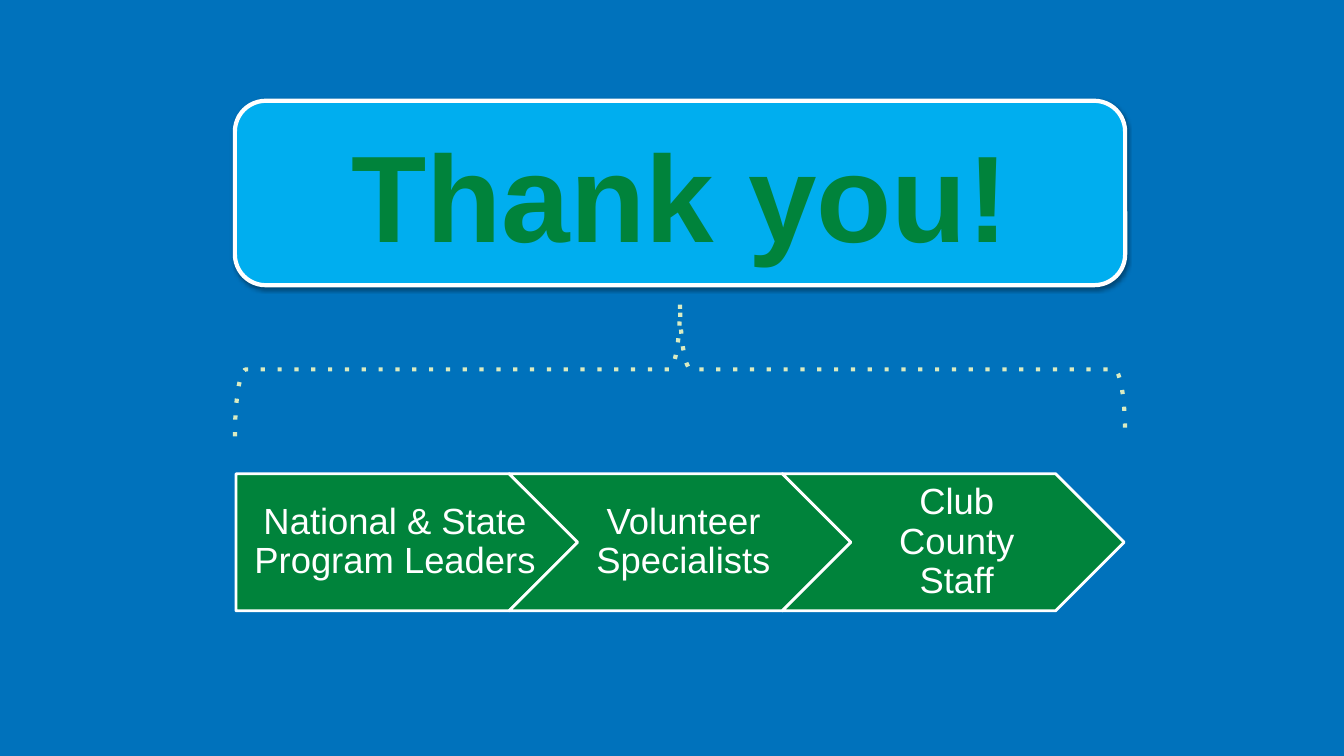
from lxml import etree
from pptx import Presentation
from pptx import util as u
from pptx.dml.color import RGBColor
from pptx.enum import dml, shapes, text
from pptx.oxml import ns

COLORS = {
    "background": "0072BC",
    "banner": "00AEEF",
    "green": "00833B",
    "white": "FFFFFF",
    "brace": "DAEBC1",
    "shadow": "000000",
}
AUDIENCES = ["National & State Program Leaders", "Volunteer Specialists", "Club County Staff"]
BANNER_BOX = (2.33, 1, 8.83, 1.83)
ARROW_LEFT, ARROW_TOP, ARROW_WIDTH, ARROW_HEIGHT = 2.34, 4.7, 3.39, 1.36
ARROW_STEP = ARROW_WIDTH - ARROW_HEIGHT / 2


def color(name):
    return RGBColor.from_string(COLORS[name])


def add_outline_shape(slide, kind, box, fill, line, width, adjustments):
    shape = slide.shapes.add_shape(kind, *map(u.Inches, box))
    shape.shadow.inherit = False
    if fill:
        shape.fill.solid()
        shape.fill.fore_color.rgb = color(fill)
    else:
        shape.fill.background()
    shape.line.color.rgb = color(line)
    shape.line.width = u.Pt(width)
    for index, value in enumerate(adjustments):
        shape.adjustments[index] = value
    return shape


def write_text(shape, words, size, font_color, insets, bold=False, spacing=1.0):
    frame = shape.text_frame
    frame.text = words
    frame.word_wrap = True
    frame.auto_size = text.MSO_AUTO_SIZE.NONE
    frame.vertical_anchor = text.MSO_ANCHOR.MIDDLE
    frame.margin_left, frame.margin_top, frame.margin_right, frame.margin_bottom = map(u.Inches, insets)
    paragraph = frame.paragraphs[0]
    paragraph.alignment = text.PP_ALIGN.CENTER
    paragraph.line_spacing = spacing
    paragraph.font.name = "Arial"
    paragraph.font.size = u.Pt(size)
    paragraph.font.bold = bold
    paragraph.font.color.rgb = color(font_color)


def add_drop_shadow(shape):
    effects = shape.element.spPr.find(ns.qn("a:effectLst"))
    shadow = etree.SubElement(
        effects, ns.qn("a:outerShdw"), blurRad=str(u.Pt(3.1)), dist=str(u.Pt(1.6)),
        dir="5400000", rotWithShape="0",
    )
    shade = etree.SubElement(shadow, ns.qn("a:srgbClr"), val=COLORS["shadow"])
    etree.SubElement(shade, ns.qn("a:alpha"), val="37000")


def add_banner(slide):
    banner = add_outline_shape(
        slide, shapes.MSO_SHAPE.ROUNDED_RECTANGLE, BANNER_BOX, "banner", "white", 3, [0.167]
    )
    add_drop_shadow(banner)
    title = slide.shapes.title
    title.left, title.top, title.width, title.height = map(u.Inches, BANNER_BOX)
    write_text(title, "Thank you!", 88, "green", (0.1, 0.05, 0.1, 0.05), bold=True)
    banner.element.addnext(title.element)


def add_audience_arrow(slide, index, words):
    first = index == 0
    kind = shapes.MSO_SHAPE.PENTAGON if first else shapes.MSO_SHAPE.CHEVRON
    box = (ARROW_LEFT + index * ARROW_STEP, ARROW_TOP, ARROW_WIDTH, ARROW_HEIGHT)
    arrow = add_outline_shape(slide, kind, box, "green", "white", 2, [0.5])
    write_text(arrow, words, 26, "white", (0.15 if first else 0.11, 0.08, 0.04, 0.08), spacing=0.9)


def add_brace(slide):
    brace = add_outline_shape(
        slide, shapes.MSO_SHAPE.LEFT_BRACE, (6.08, -0.75, 1.33, 8.83), None, "brace", 3, [0.083, 0.5]
    )
    brace.rotation = 90
    brace.line.dash_style = dml.MSO_LINE.ROUND_DOT
    brace.element.spPr.find(".//" + ns.qn("a:prstDash")).set("val", "dot")


def main():
    presentation = Presentation()
    presentation.slide_width = u.Inches(13.33)
    presentation.slide_height = u.Inches(7.5)
    slide = presentation.slides.add_slide(presentation.slide_layouts.get_by_name("Title Only"))
    slide.background.fill.solid()
    slide.background.fill.fore_color.rgb = color("background")
    add_banner(slide)
    for index, words in enumerate(AUDIENCES):
        add_audience_arrow(slide, index, words)
    add_brace(slide)
    presentation.save("out.pptx")


if __name__ == "__main__":
    main()
